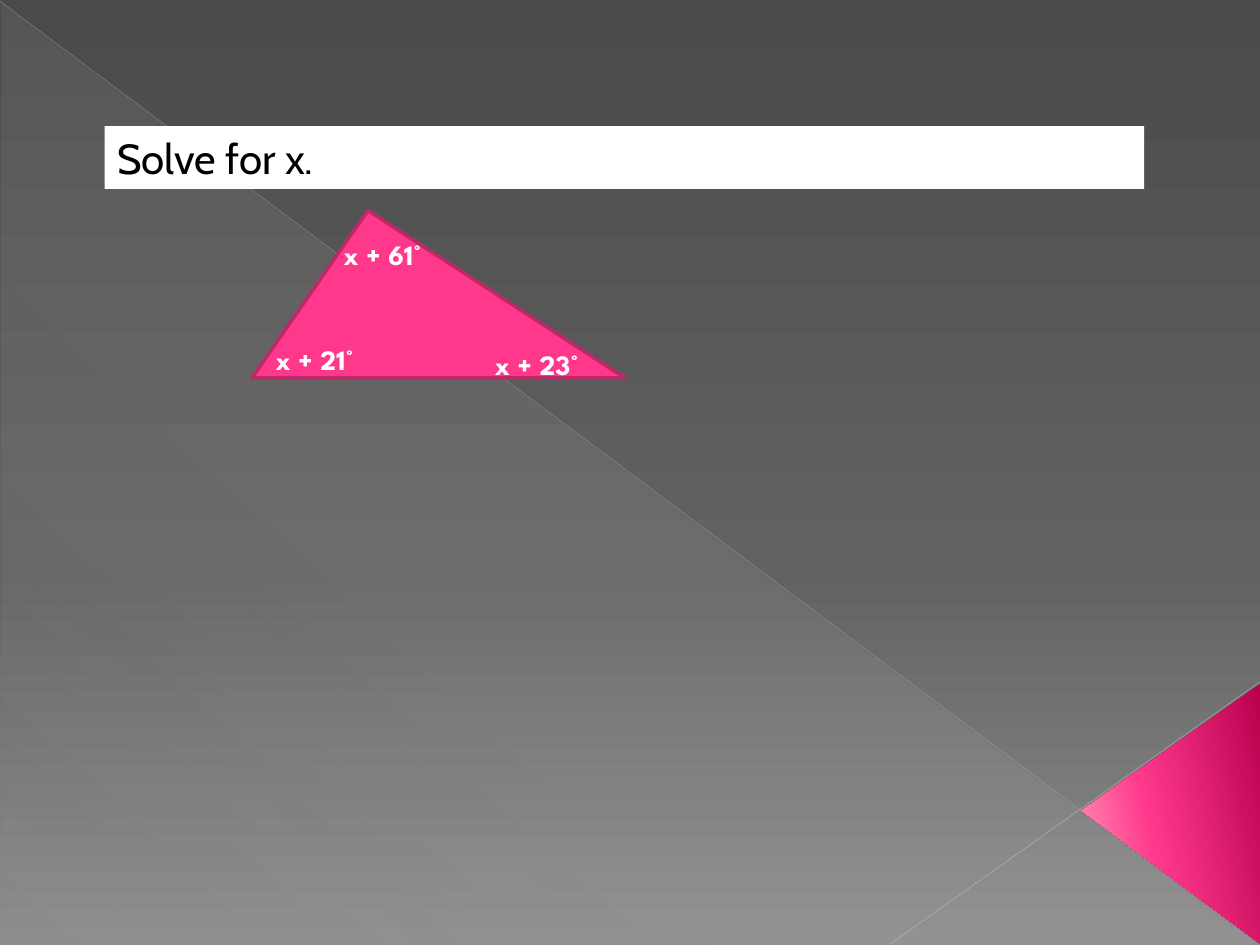
from lxml.etree import SubElement
from pptx import Presentation
from pptx.dml.color import RGBColor
from pptx.enum.shapes import MSO_CONNECTOR, MSO_SHAPE
from pptx.enum.text import MSO_ANCHOR, MSO_AUTO_SIZE, PP_ALIGN
from pptx.oxml.ns import qn
from pptx.util import Inches, Pt

WIDTH, HEIGHT = Inches(10), Inches(7.5)
COLORS = {
    "white": "FFFFFF",
    "black": "000000",
    "pink": "FF388C",
    "pink_edge": "BD2968",
    "pink_dark": "B8014E",
    "pink_light": "FF9CB9",
    "grey_dark": "4A4A4A",
    "grey_middle": "626262",
    "grey_light": "8C8C8C",
    "veil": "D2D2D2",
    "diagonal": "BFBFBF",
    "rising": "C6C6C6",
}
ANGLE_LABELS = [
    ("x + 21°", 2.09, 2.67),
    ("x + 61°", 2.63, 1.84),
    ("x + 23°", 3.83, 2.71),
]


def color(name):
    return RGBColor.from_string(COLORS[name])


def add_alpha(color_element, percent):
    SubElement(color_element, qn("a:alpha")).set("val", str(percent * 1000))


def paint_gradient(fill, owner, stops, angle):
    fill.gradient()
    gradient = next(owner.iter(qn("a:gradFill")))
    stop_list = gradient.find(qn("a:gsLst"))
    for old_stop in list(stop_list):
        stop_list.remove(old_stop)
    for position, name, opacity in stops:
        stop = SubElement(stop_list, qn("a:gs"))
        stop.set("pos", str(position * 1000))
        stop_color = SubElement(stop, qn("a:srgbClr"))
        stop_color.set("val", COLORS[name])
        if opacity < 100:
            add_alpha(stop_color, opacity)
    gradient.find(qn("a:lin")).set("ang", str(angle * 60000))


def add_plain_shape(page, kind, left, top, width, height):
    shape = page.shapes.add_shape(
        kind, Inches(left), Inches(top), Inches(width), Inches(height))
    shape.shadow.inherit = False
    shape.line.fill.background()
    return shape


def add_thin_line(page, start, end, name, weight, opacity):
    line = page.shapes.add_connector(
        MSO_CONNECTOR.STRAIGHT, *(Inches(value) for value in start + end))
    line.line.width = Pt(weight)
    line.line.color.rgb = color(name)
    add_alpha(next(line._element.spPr.iter(qn("a:srgbClr"))), opacity)
    SubElement(line._element.spPr, qn("a:effectLst"))


def write_text(frame, text, font, size, name, bold=False):
    para = frame.paragraphs[0]
    para.alignment = PP_ALIGN.LEFT
    span = para.add_run()
    span.text = text
    span.font.name = font
    span.font.size = Pt(size)
    span.font.bold = bold
    span.font.color.rgb = color(name)


def add_backdrop(page):
    paint_gradient(page.background.fill, page._element, [
        (0, "grey_dark", 100), (60, "grey_middle", 100),
        (100, "grey_light", 100)], 90)
    veil = add_plain_shape(page, MSO_SHAPE.RIGHT_TRIANGLE, 0.01, 0.02, 9.98, 7.48)
    paint_gradient(veil.fill, veil._element, [
        (0, "veil", 10), (70, "veil", 8), (100, "veil", 1)], 133)
    add_thin_line(page, (0, 0.01), (9.99, 7.49), "diagonal", 0.39, 35)
    add_thin_line(page, (10, 5.41), (7.07, 7.49), "rising", 0.47, 45)
    corner = add_plain_shape(
        page, MSO_SHAPE.ISOSCELES_TRIANGLE, 8.26, 5.75, 2.07, 1.42)
    corner.adjustments[0] = 0.513
    corner.rotation = 270
    paint_gradient(corner.fill, corner._element, [
        (0, "pink_dark", 100), (60, "pink", 100), (100, "pink_light", 100)], 258)


def place_title(page, text):
    title = page.shapes.title
    title.left, title.top = Inches(0.83), Inches(1)
    title.width, title.height = Inches(8.25), Inches(0.5)
    title.fill.solid()
    title.fill.fore_color.rgb = color("white")
    frame = title.text_frame
    frame.auto_size = MSO_AUTO_SIZE.NONE
    frame.vertical_anchor = MSO_ANCHOR.MIDDLE
    write_text(frame, text, "Cabin", 24, "black")
    page.shapes._spTree.append(title._element)


def add_problem_triangle(page):
    triangle = add_plain_shape(
        page, MSO_SHAPE.ISOSCELES_TRIANGLE, 2, 1.67, 2.96, 1.33)
    triangle.adjustments[0] = 0.311
    triangle.fill.solid()
    triangle.fill.fore_color.rgb = color("pink")
    triangle.line.color.rgb = color("pink_edge")
    triangle.line.width = Pt(2)


def add_angle_label(page, text, left, top):
    box = page.shapes.add_textbox(
        Inches(left), Inches(top), Inches(0.93), Inches(0.37))
    box.text_frame.word_wrap = False
    box.text_frame.auto_size = MSO_AUTO_SIZE.SHAPE_TO_FIT_TEXT
    write_text(box.text_frame, text, "League Spartan", 16, "white", bold=True)


def main():
    deck = Presentation()
    deck.slide_width, deck.slide_height = WIDTH, HEIGHT
    page = deck.slides.add_slide(deck.slide_layouts.get_by_name("Title Only"))
    add_backdrop(page)
    place_title(page, "Solve for x.")
    add_problem_triangle(page)
    for text, left, top in ANGLE_LABELS:
        add_angle_label(page, text, left, top)
    deck.save("out.pptx")


if __name__ == "__main__":
    main()
